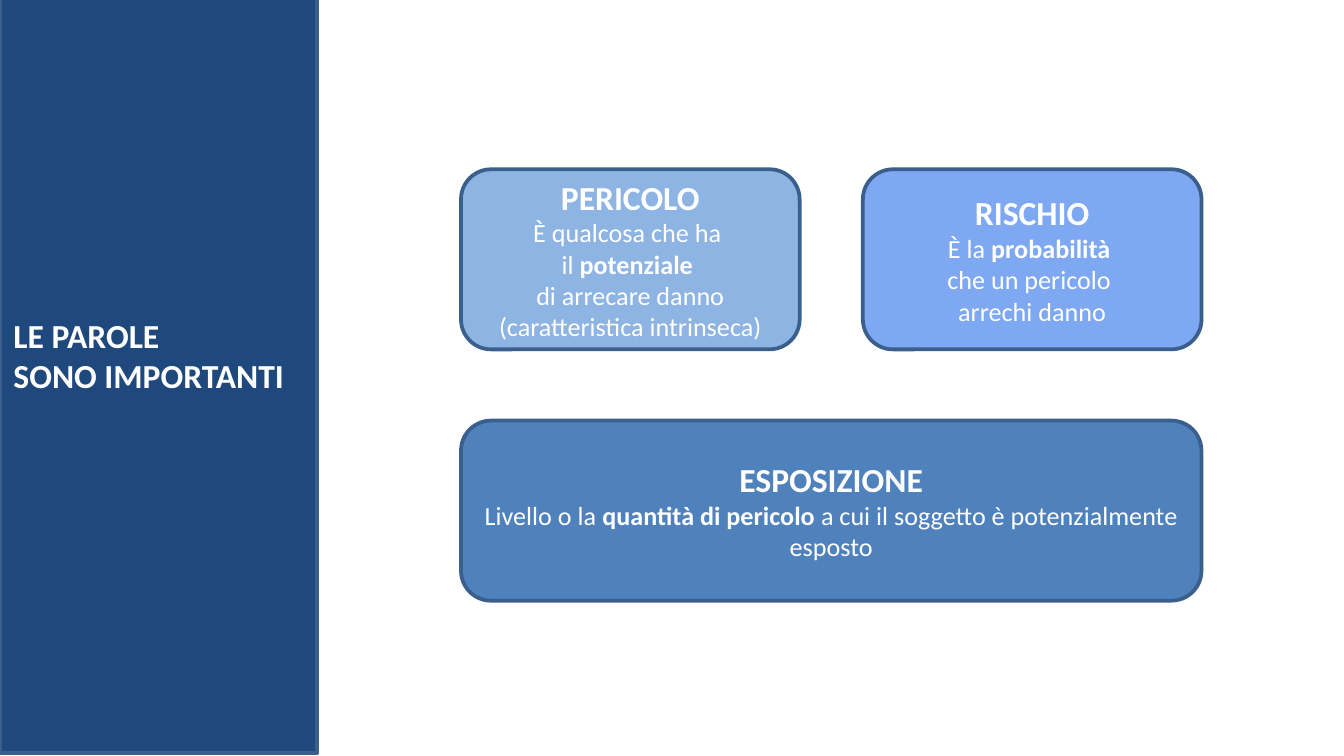
"""Build a slide that defines hazard, risk and exposure."""
import pptx
import pptx.dml.color
import pptx.enum.shapes
import pptx.enum.text
import pptx.util

Inches = pptx.util.Inches
Pt = pptx.util.Pt
ALIGN = pptx.enum.text.PP_ALIGN
ANCHOR = pptx.enum.text.MSO_ANCHOR
SHAPE = pptx.enum.shapes.MSO_SHAPE

COLORS = {
    "band": "1F497D",
    "border": "3A5F8C",
    "hazard": "8EB4E3",
    "risk": "7FA8F3",
    "exposure": "4F81BD",
    "text": "FFFFFF",
}
FONT = "Calibri"
HEADING_SIZE, BODY_SIZE = 18, 14

TITLE = ["LE PAROLE", "SONO IMPORTANTI"]
CARDS = [
    {"fill": "hazard", "row": 0, "column": 0, "span": 1, "heading": "PERICOLO",
     "body": [[("È qualcosa che ha ", False)],
              [("il ", False), ("potenziale ", True)],
              [("di arrecare danno (caratteristica intrinseca)", False)]]},
    {"fill": "risk", "row": 0, "column": 1, "span": 1, "heading": "RISCHIO",
     "body": [[("È la ", False), ("probabilità ", True)],
              [("che un pericolo ", False)],
              [("arrechi danno", False)]]},
    {"fill": "exposure", "row": 1, "column": 0, "span": 2, "heading": "ESPOSIZIONE",
     "body": [[("Livello o la ", False), ("quantità di pericolo ", True),
               ("a cui il soggetto è potenzialmente esposto", False)]]},
]

PAGE_WIDTH = 10
PAGE_HEIGHT = PAGE_WIDTH * 9 / 16
CARD_LEFT, CARD_TOP = 3.43, 1.26
CARD_WIDTH, CARD_HEIGHT = 2.52, 1.34
COLUMN_STEP, ROW_STEP = 2.99, 1.87


def rgb(name):
    return pptx.dml.color.RGBColor.from_string(COLORS[name])


def add_span(para, text, size=BODY_SIZE, bold=False):
    span = para.add_run()
    span.text = text
    span.font.name = FONT
    span.font.size = Pt(size)
    span.font.bold = bold
    span.font.color.rgb = rgb("text")


def write(frame, lines, align, anchor):
    frame.word_wrap = True
    frame.auto_size = pptx.enum.text.MSO_AUTO_SIZE.NONE
    frame.vertical_anchor = anchor
    for index, line in enumerate(lines):
        para = frame.add_paragraph() if index else frame.paragraphs[0]
        para.alignment = align
        for text, size, bold in line:
            add_span(para, text, size=size, bold=bold)


def add_box(page, kind, left, top, width, height, fill):
    box = page.shapes.add_shape(
        kind, Inches(left), Inches(top), Inches(width), Inches(height))
    box.shadow.inherit = False
    box.fill.solid()
    box.fill.fore_color.rgb = rgb(fill)
    box.line.color.rgb = rgb("border")
    box.line.width = Pt(2)
    return box


def add_title(page):
    title = page.shapes.title
    title.left, title.top = Inches(0), Inches(2.29)
    title.width, title.height = Inches(2.48), Inches(1.01)
    lines = [[(text, HEADING_SIZE, True)] for text in TITLE]
    write(title.text_frame, lines, ALIGN.LEFT, ANCHOR.TOP)
    band = add_box(page, SHAPE.RECTANGLE, 0, -0.02, 2.36, PAGE_HEIGHT, "band")
    title.element.addprevious(band.element)


def add_card(page, card):
    left = CARD_LEFT + card["column"] * COLUMN_STEP
    top = CARD_TOP + card["row"] * ROW_STEP
    width = CARD_WIDTH + (card["span"] - 1) * COLUMN_STEP
    box = add_box(page, SHAPE.ROUNDED_RECTANGLE, left, top, width, CARD_HEIGHT, card["fill"])
    lines = [[(card["heading"], HEADING_SIZE, True)]]
    lines += [[(text, BODY_SIZE, bold) for text, bold in line] for line in card["body"]]
    write(box.text_frame, lines, ALIGN.CENTER, ANCHOR.MIDDLE)


def main():
    deck = pptx.Presentation()
    deck.slide_width, deck.slide_height = Inches(PAGE_WIDTH), Inches(PAGE_HEIGHT)
    page = deck.slides.add_slide(deck.slide_layouts[5])
    add_title(page)
    for card in CARDS:
        add_card(page, card)
    deck.save("out.pptx")


if __name__ == "__main__":
    main()
